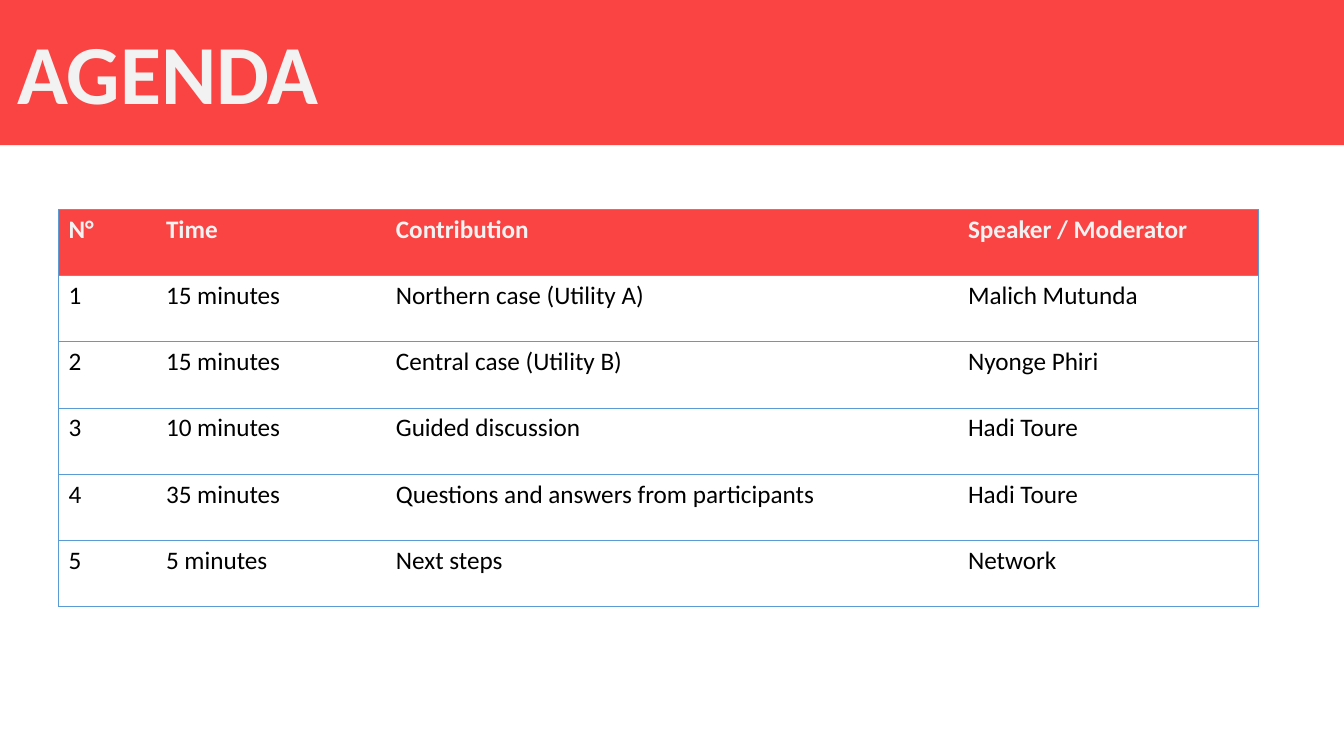
from lxml.etree import SubElement
from pptx import Presentation
from pptx.dml.color import RGBColor
from pptx.enum.shapes import MSO_SHAPE
from pptx.enum.text import MSO_ANCHOR, PP_ALIGN
from pptx.oxml import parse_xml
from pptx.oxml.ns import nsdecls, qn
from pptx.util import Pt

COLORS = {"red": "FA4443", "light": "F2F2F2", "black": "000000", "border": "5B9BD5"}
FONT = "Calibri"
AGENDA = [
    ("N°", "Time", "Contribution", "Speaker / Moderator"),
    ("1", "15 minutes", "Northern case (Utility A)", "Malich Mutunda"),
    ("2", "15 minutes", "Central case (Utility B)", "Nyonge Phiri"),
    ("3", "10 minutes", "Guided discussion", "Hadi Toure"),
    ("4", "35 minutes", "Questions and answers from participants", "Hadi Toure"),
    ("5", "5 minutes", "Next steps", "Network"),
]
COLUMN_WIDTHS = [69.6, 164.2, 408.7, 214.5]
ROW_HEIGHT = 47.28


def format_font(font, size, color, bold):
    font.name = FONT
    font.size = Pt(size)
    font.bold = bold
    font.color.rgb = RGBColor.from_string(COLORS[color])


def set_borders(cell, visible_sides):
    properties = cell._tc.get_or_add_tcPr()
    for index, side in enumerate("LRTB"):
        line = parse_xml(f'<a:ln{side} {nsdecls("a")} w="{Pt(0.5)}"/>')
        if side in visible_sides:
            fill = SubElement(line, qn("a:solidFill"))
            SubElement(fill, qn("a:srgbClr"), val=COLORS["border"])
        else:
            SubElement(line, qn("a:noFill"))
        properties.insert(index, line)


presentation = Presentation()
presentation.slide_width = Pt(960)
presentation.slide_height = Pt(540)
slide = presentation.slides.add_slide(presentation.slide_layouts[5])

# Agenda table
table = slide.shapes.add_table(
    len(AGENDA), len(COLUMN_WIDTHS), Pt(41.8), Pt(149.6),
    Pt(sum(COLUMN_WIDTHS)), Pt(ROW_HEIGHT * len(AGENDA))).table
table.horz_banding = False
for column, width in zip(table.columns, COLUMN_WIDTHS):
    column.width = Pt(width)
for row_index, entries in enumerate(AGENDA):
    table.rows[row_index].height = Pt(ROW_HEIGHT)
    is_header = row_index == 0
    for column_index, entry in enumerate(entries):
        cell = table.cell(row_index, column_index)
        cell.text_frame.text = entry
        run = cell.text_frame.paragraphs[0].runs[0]
        format_font(run.font, 18, "light" if is_header else "black", is_header)
        if is_header:
            cell.fill.solid()
            cell.fill.fore_color.rgb = RGBColor.from_string(COLORS["red"])
        else:
            cell.fill.background()
        outer_sides = {0: "L", len(entries) - 1: "R"}.get(column_index, "")
        set_borders(cell, "TB" + outer_sides)

# Title banner
banner = slide.shapes.add_shape(MSO_SHAPE.RECTANGLE, 0, 0, Pt(960), Pt(103.7))
banner.shadow.inherit = False
banner.fill.solid()
banner.fill.fore_color.rgb = RGBColor.from_string(COLORS["red"])
banner.line.fill.background()

# Title, moved in front of the banner
title = slide.shapes.title
title.left, title.top, title.width, title.height = Pt(5), Pt(7.2), Pt(955), Pt(96.5)
title.text_frame.text = "AGENDA"
title.text_frame.vertical_anchor = MSO_ANCHOR.MIDDLE
paragraph = title.text_frame.paragraphs[0]
paragraph.alignment = PP_ALIGN.LEFT
paragraph.line_spacing = 0.9
format_font(paragraph.runs[0].font, 60, "light", True)
banner.element.addnext(title.element)

presentation.save("out.pptx")
